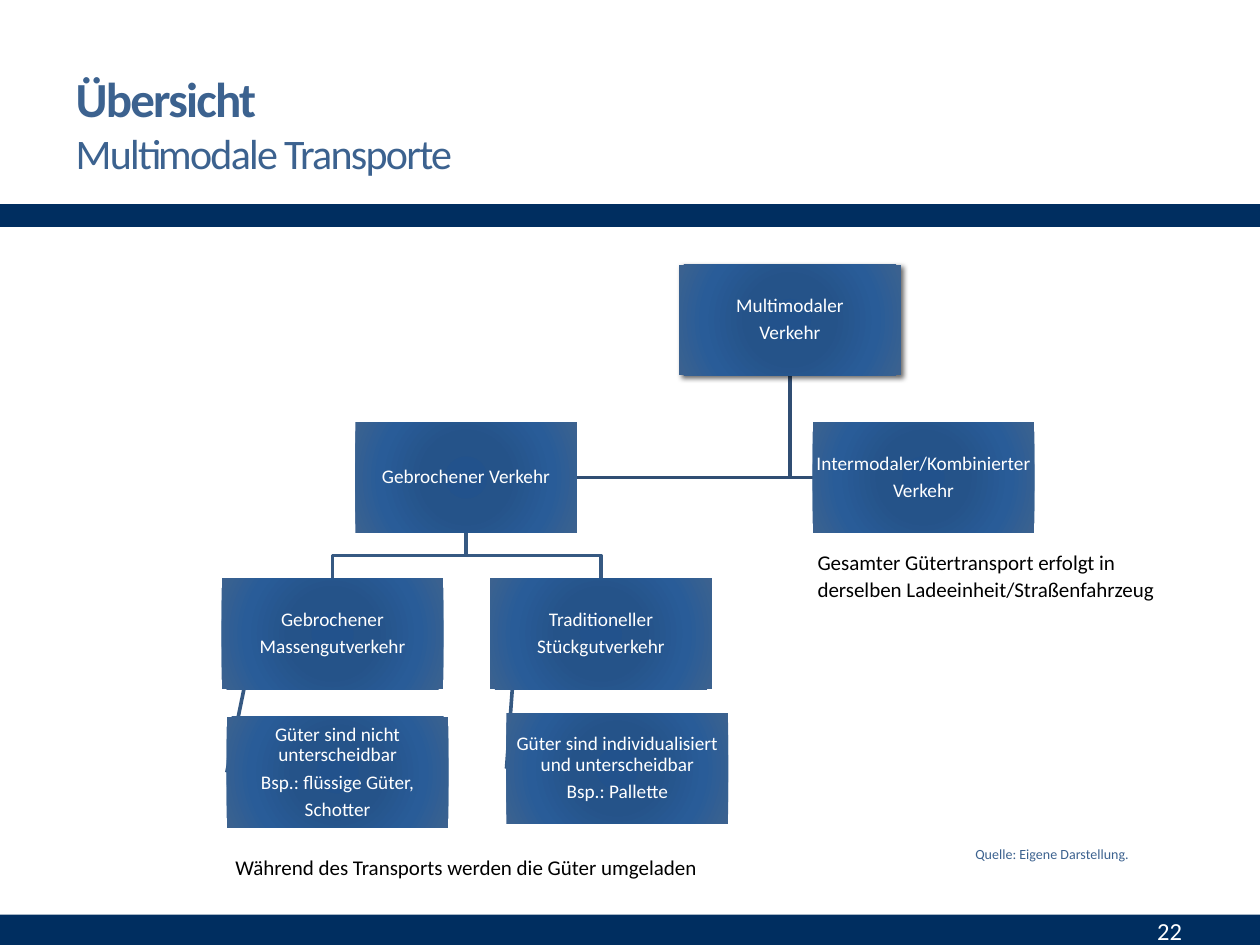
from dataclasses import dataclass

from lxml import etree
from pptx import Presentation
from pptx import util as u
from pptx.dml.color import RGBColor
from pptx.enum import shapes, text
from pptx.oxml import parse_xml
from pptx.oxml.ns import nsdecls, qn

Inches, Pt = u.Inches, u.Pt


@dataclass(frozen=True)
class Theme:
    font: str = "Calibri"
    navy: str = "002E60"
    blue: str = "3C628F"
    upper_line: str = "304E73"
    lower_line: str = "365982"
    white: str = "FFFFFF"
    black: str = "000000"
    gradient: tuple = ((0, "22528C"), (34, "255389"), (70, "295C98"), (100, "3C628F"))
    title: int = 28
    subtitle: int = 24
    number: int = 14
    note: int = 12
    node: int = 11
    source: int = 8


theme = Theme()


def format_runs(paragraph, size, color):
    for span in paragraph.runs:
        span.font.name = theme.font
        span.font.size = Pt(size)
        span.font.color.rgb = RGBColor.from_string(color)


def add_note(page, area, words, size, color, align=text.PP_ALIGN.LEFT):
    box = page.shapes.add_textbox(*map(Inches, area))
    box.text_frame.word_wrap = True
    para = box.text_frame.paragraphs[0]
    para.text = words
    para.alignment = align
    format_runs(para, size, color)
    return box


deck = Presentation()
deck.slide_width, deck.slide_height = Inches(10), Inches(7.5)
page = deck.slides.add_slide(deck.slide_layouts[5])

# Bands above and below the content
for top, height in ((1.62, 0.18), (7.26, 0.24)):
    band = page.shapes.add_shape(
        shapes.MSO_SHAPE.RECTANGLE, 0, Inches(top), deck.slide_width, Inches(height))
    band.fill.solid()
    band.fill.fore_color.rgb = RGBColor.from_string(theme.navy)
    band.line.fill.background()
    band.shadow.inherit = False

# Title with subtitle
title = page.shapes.title
title.left, title.top, title.width, title.height = map(Inches, (0.5, 0.44, 5.21, 1.08))
title.text_frame.vertical_anchor = text.MSO_ANCHOR.MIDDLE
para = title.text_frame.paragraphs[0]
para.text = "Übersicht\vMultimodale Transporte"
para.alignment = text.PP_ALIGN.LEFT
for span, size, bold in zip(para.runs, (theme.title, theme.subtitle), (True, False)):
    span.font.name = theme.font
    span.font.size = Pt(size)
    span.font.bold = bold
    span.font.color.rgb = RGBColor.from_string(theme.blue)
    span.font._element.set("spc", "-100")
line_break = para._p.find(qn("a:br"))
etree.SubElement(line_break, qn("a:rPr")).set("sz", str(theme.title * 100))

# Tree: left and top of each node, and its paragraphs
node_width, node_height = 1.76, 0.88
nodes = {
    "multimodal": (5.39, 2.1, "Multimodaler\nVerkehr"),
    "broken": (2.82, 3.35, "Gebrochener Verkehr"),
    "bulk": (1.76, 4.59, "Gebrochener\nMassengutverkehr"),
    "bulk goods": (1.8, 5.69,
                   "Güter sind nicht unterscheidbar\nBsp.: flüssige Güter,\nSchotter"),
    "general": (3.89, 4.59, "Traditioneller\nStückgutverkehr"),
    "general goods": (4.02, 5.66,
                      "Güter sind individualisiert und unterscheidbar\nBsp.: Pallette"),
    "intermodal": (6.45, 3.35, "Intermodaler/Kombinierter\nVerkehr"),
}

# Links, drawn before the nodes so that they lie behind them
links = []
root_x, root_y = nodes["multimodal"][0] + node_width / 2, nodes["multimodal"][1] + node_height
side_y = nodes["broken"][1] + node_height / 2
for side_x in (nodes["intermodal"][0], nodes["broken"][0] + node_width):
    links.append((theme.upper_line, [(root_x, root_y), (root_x, side_y), (side_x, side_y)]))

fork_x, fork_y = nodes["broken"][0] + node_width / 2, nodes["broken"][1] + node_height
for child in ("bulk", "general"):
    left, top, _ = nodes[child]
    child_x, middle_y = left + node_width / 2, (fork_y + top) / 2
    links.append((theme.lower_line, [(fork_x, fork_y), (fork_x, middle_y),
                                     (child_x, middle_y), (child_x, top)]))
    goods_left, goods_top, _ = nodes[child + " goods"]
    links.append((theme.lower_line, [(left + node_width / 10, top + node_height),
                                     (goods_left, goods_top + node_height / 2)]))

for color, points in links:
    points = [(Inches(x), Inches(y)) for x, y in points]
    if len(points) == 2:
        link = page.shapes.add_connector(
            shapes.MSO_CONNECTOR.STRAIGHT, *points[0], *points[1])
        etree.SubElement(link._element.spPr, qn("a:effectLst"))
    else:
        outline = page.shapes.build_freeform(*points[0])
        outline.add_line_segments(points[1:], close=False)
        link = outline.convert_to_shape()
        link.fill.background()
        link.shadow.inherit = False
    link.line.color.rgb = RGBColor.from_string(color)
    link.line.width = Pt(2.08)

stops = "".join(f'<a:gs pos="{position * 1000}"><a:srgbClr val="{color}"/></a:gs>'
                for position, color in theme.gradient)
gradient_xml = (
    f'<a:gradFill {nsdecls("a")} rotWithShape="1"><a:gsLst>{stops}</a:gsLst>'
    '<a:path path="circle"><a:fillToRect l="100000" t="100000" r="100000" b="100000"/>'
    '</a:path></a:gradFill>')
shadow_xml = (
    f'<a:outerShdw {nsdecls("a")} blurRad="38100" dist="25400" dir="2700000" '
    f'rotWithShape="0"><a:srgbClr val="{theme.black}"><a:alpha val="60000"/>'
    '</a:srgbClr></a:outerShdw>')

for name, (left, top, words) in nodes.items():
    node = page.shapes.add_shape(
        shapes.MSO_SHAPE.RECTANGLE, *map(Inches, (left, top, node_width, node_height)))
    node.line.fill.background()
    node.shadow.inherit = False
    properties = node._element.spPr
    properties.find(qn("a:prstGeom")).addnext(parse_xml(gradient_xml))
    if name == "multimodal":
        properties.find(qn("a:effectLst")).append(parse_xml(shadow_xml))
    frame = node.text_frame
    frame.word_wrap = True
    frame.vertical_anchor = text.MSO_ANCHOR.MIDDLE
    frame.margin_left = frame.margin_right = Inches(0.01)
    frame.margin_top = frame.margin_bottom = Inches(0.01)
    frame.text = words
    for para in frame.paragraphs:
        para.alignment = text.PP_ALIGN.CENTER
        para.line_spacing = 0.9
        para.space_after = Pt(3.7)
        format_runs(para, theme.node, theme.white)

# Notes, source and page number
for area, words in (
    ((1.77, 6.72, 4.37, 0.31), "Während des Transports werden die Güter umgeladen"),
    ((6.39, 4.3, 5, 0.53),
     "Gesamter Gütertransport erfolgt in\vderselben Ladeeinheit/Straßenfahrzeug"),
):
    note = add_note(page, area, words, theme.note, theme.black)
    note.text_frame.paragraphs[0].line_spacing = 1.07
add_note(page, (6.73, 6.66, 2.33, 0.24), "Quelle: Eigene Darstellung.",
         theme.source, theme.blue, text.PP_ALIGN.RIGHT)
number = add_note(page, (8.31, 7.21, 1.17, 0.36), "22",
                  theme.number, theme.white, text.PP_ALIGN.RIGHT)
number.text_frame.vertical_anchor = text.MSO_ANCHOR.MIDDLE

deck.save("out.pptx")
